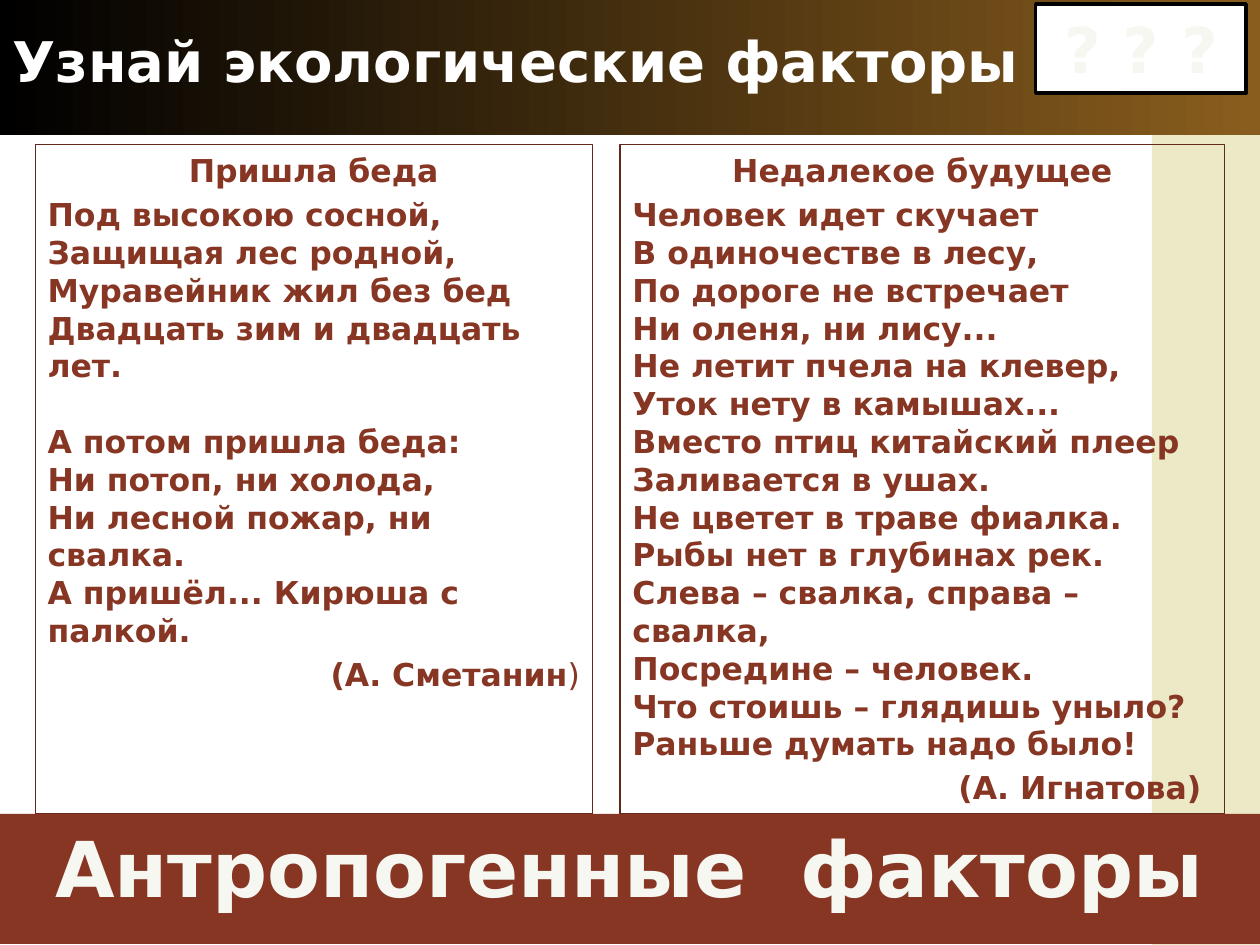
import pptx
import pptx.dml.color
import pptx.enum.shapes
import pptx.enum.text
import pptx.util

Cm = pptx.util.Cm
Pt = pptx.util.Pt
RGBColor = pptx.dml.color.RGBColor
ALIGN = pptx.enum.text.PP_ALIGN
ANCHOR = pptx.enum.text.MSO_ANCHOR

FONT = "DejaVu Sans"
WHITE = RGBColor(0xFF, 0xFF, 0xFF)
BLACK = RGBColor(0x00, 0x00, 0x00)
BRONZE = RGBColor(0x89, 0x5D, 0x1D)
SAND = RGBColor(0xEC, 0xE9, 0xC6)
RUST = RGBColor(0x87, 0x36, 0x24)
DARK_RUST = RGBColor(0x64, 0x28, 0x1B)
IVORY = RGBColor(0xF6, 0xF7, 0xF1)

deck = pptx.Presentation()
deck.slide_width = Cm(25.4)
deck.slide_height = Cm(19.05)
page = deck.slides.add_slide(deck.slide_layouts[6])


def add_box(left, top, width, height, fill=None, line=None, weight=0.75):
    box = page.shapes.add_shape(
        pptx.enum.shapes.MSO_SHAPE.RECTANGLE,
        Cm(left), Cm(top), Cm(width), Cm(height))
    box.shadow.inherit = False
    if fill is None:
        box.fill.background()
    else:
        box.fill.solid()
        box.fill.fore_color.rgb = fill
    if line is None:
        box.line.fill.background()
    else:
        box.line.color.rgb = line
        box.line.width = Pt(weight)
    box.text_frame.word_wrap = True
    box.text_frame.vertical_anchor = ANCHOR.TOP
    return box


def add_span(para, text, size, color, bold=True):
    span = para.add_run()
    span.text = text
    span.font.name = FONT
    span.font.size = Pt(size)
    span.font.bold = bold
    span.font.color.rgb = color


# Side strip and gradient header
add_box(23.22, 2.72, 2.18, 16.33, SAND)
header = add_box(0, 0, 25.4, 2.72)
header.fill.gradient()
header.fill.gradient_angle = 0
for stop, color in zip(header.fill.gradient_stops, (BLACK, BRONZE)):
    stop.color.rgb = color
for stop, position in zip(header.fill.gradient_stops, (0, 1)):
    stop.position = position

# Title
title = page.shapes.add_textbox(Cm(0), Cm(0), Cm(21.13), Cm(2.44))
title.text_frame.word_wrap = True
title.text_frame.vertical_anchor = ANCHOR.MIDDLE
add_span(title.text_frame.paragraphs[0], "Узнай экологические факторы", 32, WHITE)

# Poems: left, width, heading, stanzas, signature as (text, bold) pieces
poems = [
    (0.71, 11.23, "Пришла беда",
     [["Под высокою сосной,", "Защищая лес родной,",
       "Муравейник жил без бед", "Двадцать зим и двадцать лет."],
      ["А потом пришла беда:", "Ни потоп, ни холода,",
       "Ни лесной пожар, ни свалка.", "А пришёл... Кирюша с палкой."]],
     [("(А. Сметанин", True), (")", False)]),
    (12.5, 12.19, "Недалекое будущее",
     [["Человек идет скучает", "В одиночестве в лесу,",
       "По дороге не встречает", "Ни оленя, ни лису...",
       "Не летит пчела на клевер,", "Уток нету в камышах...",
       "Вместо птиц китайский плеер", "Заливается в ушах.",
       "Не цветет в траве фиалка.", "Рыбы нет в глубинах рек.",
       "Слева – свалка, справа – свалка,", "Посредине – человек.",
       "Что стоишь – глядишь уныло?", "Раньше думать надо было!"]],
     [("(А. Игнатова) ", True)]),
]
for left, width, heading, stanzas, signature in poems:
    frame = add_box(left, 2.92, width, 13.49, line=DARK_RUST).text_frame
    para = frame.paragraphs[0]
    para.alignment = ALIGN.CENTER
    add_span(para, heading, 18, RUST)

    for number, stanza in enumerate(stanzas):
        para = frame.add_paragraph()
        para.alignment = ALIGN.LEFT
        para.space_before = Pt(21.6 if number else 3.6)
        for index, verse in enumerate(stanza):
            if index:
                para.add_line_break()
            # A no-break space closes each verse
            add_span(para, verse + " ", 18, RUST)

    para = frame.add_paragraph()
    para.alignment = ALIGN.RIGHT
    para.space_before = Pt(3.6)
    for text, bold in signature:
        add_span(para, text, 18, RUST, bold)

# Question box and answer banner
labels = [
    (add_box(20.88, 0.08, 4.24, 1.8, WHITE, BLACK, 2), "? ? ?", 36),
    (add_box(0, 16.41, 25.4, 2.62, RUST), "Антропогенные  факторы", 44),
]
for box, text, size in labels:
    para = box.text_frame.paragraphs[0]
    para.alignment = ALIGN.CENTER
    add_span(para, text, size, IVORY)

deck.save("out.pptx")
